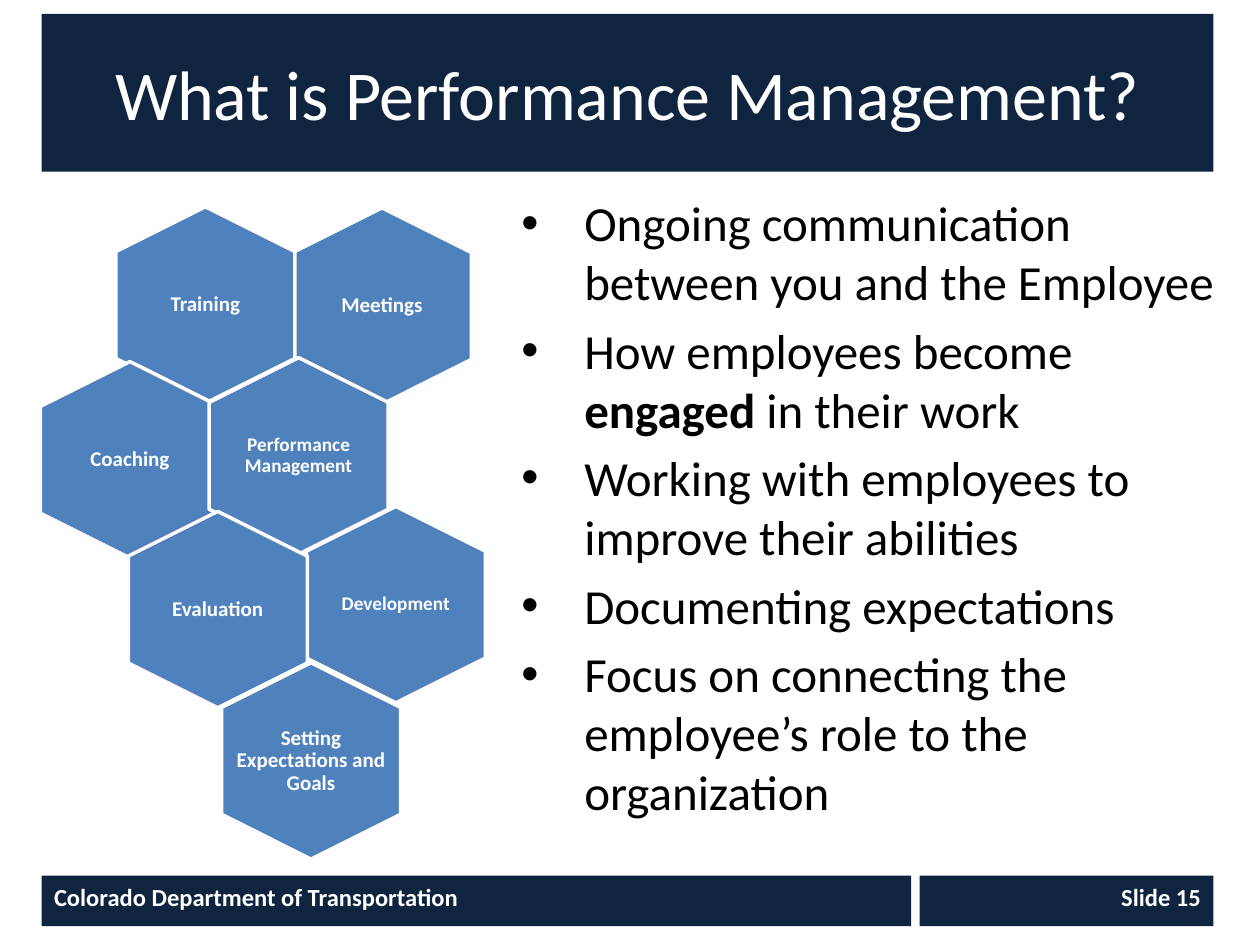
from dataclasses import dataclass
from lxml.etree import SubElement
from pptx import Presentation
from pptx.dml.color import RGBColor
from pptx.enum.shapes import MSO_SHAPE
from pptx.enum.text import MSO_ANCHOR, PP_ALIGN
from pptx.oxml.ns import qn
from pptx.util import Cm, Pt


@dataclass(frozen=True)
class Theme:
    font: str = "Calibri"
    navy: RGBColor = RGBColor(0x0F, 0x24, 0x3E)
    blue: RGBColor = RGBColor(0x4F, 0x81, 0xBD)
    white: RGBColor = RGBColor(0xFF, 0xFF, 0xFF)
    black: RGBColor = RGBColor(0, 0, 0)
    title: int = 40
    body: int = 28
    foot: int = 14
    label: int = 12
    small: int = 11


theme = Theme()


def write(para, text, size, color=theme.white, bold=False, align=PP_ALIGN.LEFT):
    para.alignment = align
    run = para.add_run()
    run.text = text
    font = run.font
    font.name, font.size, font.bold = theme.font, Pt(size), bold
    font.color.rgb = color


def draw(kind, left, top, width, height, fill):
    shape = slide.shapes.add_shape(kind, Cm(left), Cm(top), Cm(width), Cm(height))
    shape.shadow.inherit = False
    shape.fill.solid()
    shape.fill.fore_color.rgb = fill
    shape.line.fill.background()
    return shape


deck = Presentation()
deck.slide_width, deck.slide_height = Cm(25.4), Cm(19.05)
slide = deck.slides.add_slide(deck.slide_layouts[6])

bars = [
    ("What is Performance Management?", 0.84, 0.28, 23.62, 3.18,
     theme.title, False, PP_ALIGN.CENTER, MSO_ANCHOR.MIDDLE),
    ("Colorado Department of Transportation", 0.84, 17.65, 17.53, 1.02,
     theme.foot, True, PP_ALIGN.LEFT, MSO_ANCHOR.TOP),
    ("Slide 15", 18.54, 17.65, 5.92, 1.02,
     theme.foot, True, PP_ALIGN.RIGHT, MSO_ANCHOR.TOP),
]
for text, left, top, width, height, size, bold, align, anchor in bars:
    bar = draw(MSO_SHAPE.RECTANGLE, left, top, width, height, theme.navy)
    frame = bar.text_frame
    frame.word_wrap = True
    frame.vertical_anchor = anchor
    write(frame.paragraphs[0], text, size, bold=bold, align=align)

points = [
    ["Ongoing communication between you and the Employee"],
    ["How employees become ", "engaged", " in their work"],
    ["Working with employees to improve their abilities"],
    ["Documenting expectations"],
    ["Focus on connecting the employee’s role to the organization"],
]
box = slide.shapes.add_textbox(Cm(10.26), Cm(3.76), Cm(14.55), Cm(12.3))
frame = box.text_frame
frame.word_wrap = True
for row, parts in enumerate(points):
    para = frame.add_paragraph() if row else frame.paragraphs[0]
    para.space_before = Pt(theme.body * 0.2 if row else 0)
    for part in parts:
        write(para, part, theme.body, color=theme.black, bold=part == "engaged")
    props = para._p.get_or_add_pPr()
    props.set("marL", str(Cm(1.27)))
    props.set("indent", str(-Cm(1.27)))
    SubElement(props, qn("a:buFont"), typeface="Arial")
    SubElement(props, qn("a:buChar"), char="•")

long, short, tall = 3.96, 3.61, 2.69
cells = [
    ("Meetings", 7.7, 6.17, 2.46, theme.label),
    ("Training", 4.14, 6.15, 2.46, theme.label),
    ("Coaching", 2.62, 9.27, 2.46, theme.label),
    ("Performance Management", 6.02, 9.19, 2.46, theme.small),
    ("Development", 7.98, 12.19, 2.46, theme.small),
    ("Evaluation", 4.39, 12.29, 2.46, theme.label),
    ("Setting Expectations and Goals", 6.27, 15.34, 3.02, theme.label),
]
for text, x, y, wide, size in cells:
    cell = draw(MSO_SHAPE.HEXAGON, x - long / 2, y - short / 2, long, short, theme.blue)
    cell.rotation = 90
    cell.adjustments[0] = 0.25
    cell.adjustments[1] = 1.1547
    cell.line.color.rgb = theme.white
    cell.line.width = Pt(2)
    label = slide.shapes.add_textbox(Cm(x - wide / 2), Cm(y - tall / 2), Cm(wide), Cm(tall))
    frame = label.text_frame
    frame.word_wrap = True
    frame.vertical_anchor = MSO_ANCHOR.MIDDLE
    frame.margin_left = frame.margin_right = frame.margin_top = frame.margin_bottom = 0
    para = frame.paragraphs[0]
    para.line_spacing = 0.9
    write(para, text, size, bold=True, align=PP_ALIGN.CENTER)

deck.save("out.pptx")
